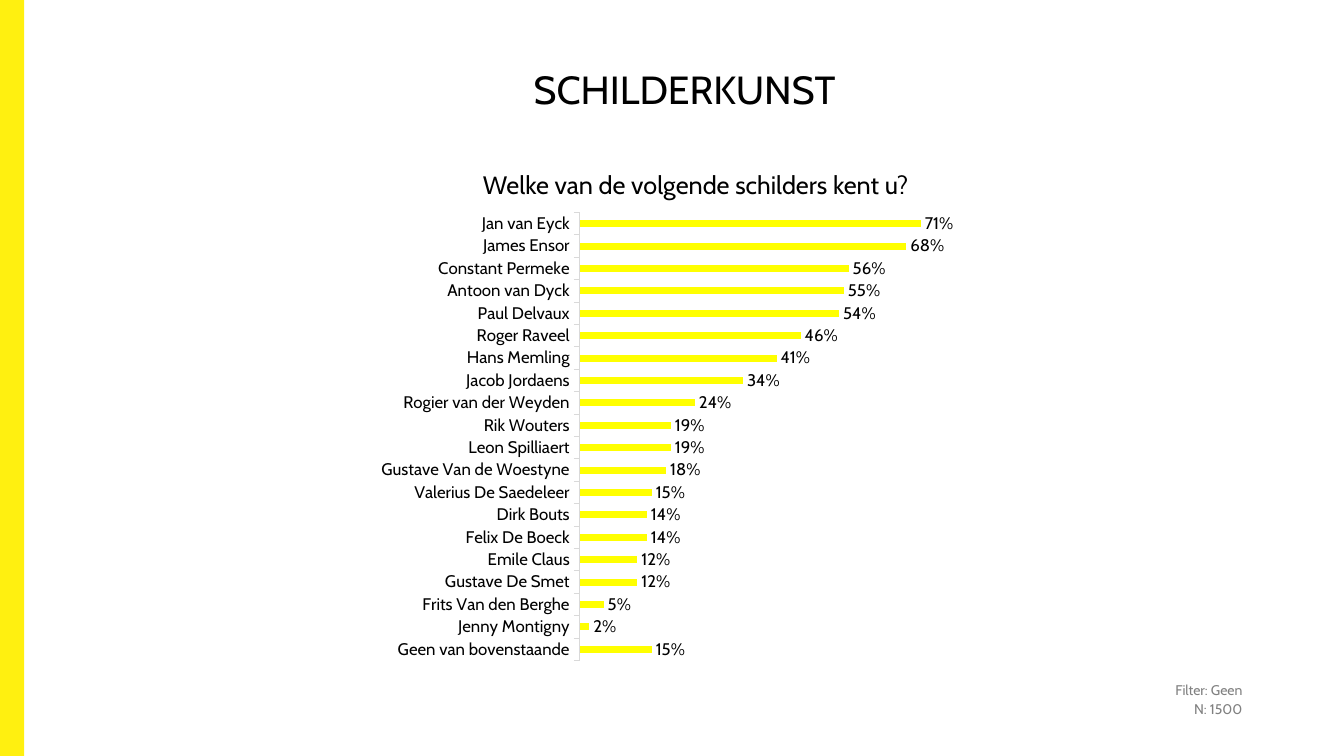
from lxml.etree import SubElement
from pptx import Presentation
from pptx.chart.data import CategoryChartData
from pptx.dml.color import RGBColor
from pptx.enum.chart import XL_CHART_TYPE as ChartType, XL_LABEL_POSITION as LabelPosition
from pptx.enum.chart import XL_TICK_LABEL_POSITION as TickLabels, XL_TICK_MARK as TickMark
from pptx.enum.shapes import MSO_SHAPE as Shape
from pptx.enum.text import MSO_ANCHOR as Anchor, PP_ALIGN as Align
from pptx.oxml.ns import qn
from pptx.util import Inches, Pt

COLORS = {"band": "FFF010", "bar": "FFFF00", "text": "000000", "note": "808080", "axis": "D9D9D9"}
PAINTERS = {
    "Jan van Eyck": 0.71, "James Ensor": 0.68, "Constant Permeke": 0.56,
    "Antoon van Dyck": 0.55, "Paul Delvaux": 0.54, "Roger Raveel": 0.46,
    "Hans Memling": 0.41, "Jacob Jordaens": 0.34, "Rogier van der Weyden": 0.24,
    "Rik Wouters": 0.19, "Leon Spilliaert": 0.19, "Gustave Van de Woestyne": 0.18,
    "Valerius De Saedeleer": 0.15, "Dirk Bouts": 0.14, "Felix De Boeck": 0.14,
    "Emile Claus": 0.12, "Gustave De Smet": 0.12, "Frits Van den Berghe": 0.05,
    "Jenny Montigny": 0.02, "Geen van bovenstaande": 0.15,
}


class SurveySlide:
    font_name = "Cabin"
    percent = "###0%"

    def __init__(self, slide):
        self.slide = slide

    def color(self, name):
        return RGBColor.from_string(COLORS[name])

    def style(self, font, size, color="text"):
        font.name = self.font_name
        font.size = Pt(size)
        font.bold = False
        font.color.rgb = self.color(color)

    def band(self, left, top, width, height):
        band = self.slide.shapes.add_shape(Shape.RECTANGLE, *map(Inches, (left, top, width, height)))
        band.shadow.inherit = False
        band.fill.solid()
        band.fill.fore_color.rgb = self.color("band")
        band.line.fill.background()

    def set_lines(self, holder, box, lines, size, align, color="text", gap=0):
        holder.left, holder.top, holder.width, holder.height = map(Inches, box)
        frame = holder.text_frame
        frame.word_wrap = True
        frame.vertical_anchor = Anchor.TOP
        frame.text = "\n".join(lines)
        for index, paragraph in enumerate(frame.paragraphs):
            paragraph.alignment = align
            paragraph.space_before = Pt(gap if index else 0)
            properties = paragraph._p.get_or_add_pPr()
            properties.set("marL", "0")
            properties.set("indent", "0")
            SubElement(properties, qn("a:buNone"))
            for run in paragraph.runs:
                self.style(run.font, size, color)

    def note(self, box, lines):
        holder = self.slide.shapes.add_textbox(*map(Inches, box))
        self.set_lines(holder, box, lines, 10, Align.RIGHT, "note", gap=2)

    def bar_chart(self, box, scores, plot_area):
        data = CategoryChartData(number_format=self.percent)
        data.categories = list(scores)
        data.add_series("Series 1", list(scores.values()))
        frame = self.slide.shapes.add_chart(ChartType.BAR_CLUSTERED, *map(Inches, box), data)
        chart = frame.chart
        chart.has_legend = False
        chart.has_title = False
        self.style(chart.font, 12)

        painters = chart.category_axis
        painters.reverse_order = True
        painters.major_tick_mark = TickMark.OUTSIDE
        painters.tick_label_position = TickLabels.LOW
        painters.format.line.color.rgb = self.color("axis")
        painters.format.line.width = Pt(0.75)
        self.style(painters.tick_labels.font, 12)

        shares = chart.value_axis
        shares.minimum_scale, shares.maximum_scale = 0, 1
        shares.has_major_gridlines = False
        shares.visible = False

        plot = chart.plots[0]
        plot.vary_by_categories = False
        plot.gap_width = 219
        bars = plot.series[0]
        bars.format.fill.solid()
        bars.format.fill.fore_color.rgb = self.color("bar")
        labels = bars.data_labels
        labels.show_value = True
        labels.number_format = self.percent
        labels.number_format_is_linked = False
        labels.position = LabelPosition.OUTSIDE_END
        self.style(labels.font, 12)
        self.place_plot(chart, plot_area)

    def place_plot(self, chart, plot_area):
        area = chart._chartSpace.chart.plotArea
        layout = area.find(qn("c:layout"))
        if layout is None:
            layout = SubElement(area, qn("c:layout"))
            area.insert(0, layout)
        manual = SubElement(layout, qn("c:manualLayout"))
        settings = {"layoutTarget": "inner", "xMode": "edge", "yMode": "edge"}
        settings.update(zip("xywh", plot_area))
        for tag, value in settings.items():
            SubElement(manual, qn(f"c:{tag}")).set("val", str(value))


def main():
    deck = Presentation()
    deck.slide_width, deck.slide_height = Inches(13.33), Inches(7.5)
    slide = deck.slides.add_slide(deck.slide_layouts[1])
    survey = SurveySlide(slide)
    title, question = slide.placeholders

    survey.band(0, 0, 0.24, 7.5)
    survey.set_lines(title, (0.24, 0.6, 13.1, 1.25), ["SCHILDERKUNST"], 28, Align.CENTER)
    survey.set_lines(question, (4.69, 1.63, 8.64, 1.9),
                     ["Welke van de volgende schilders kent u?"], 18, Align.LEFT)
    survey.note((8.61, 6.71, 3.81, 0.53), ["Filter: Geen", "N: 1500"])
    survey.bar_chart((2.51, 1.96, 9.53, 4.94), PAINTERS, (0.34, 0.03, 0.5, 0.9))
    deck.save("out.pptx")


if __name__ == "__main__":
    main()
